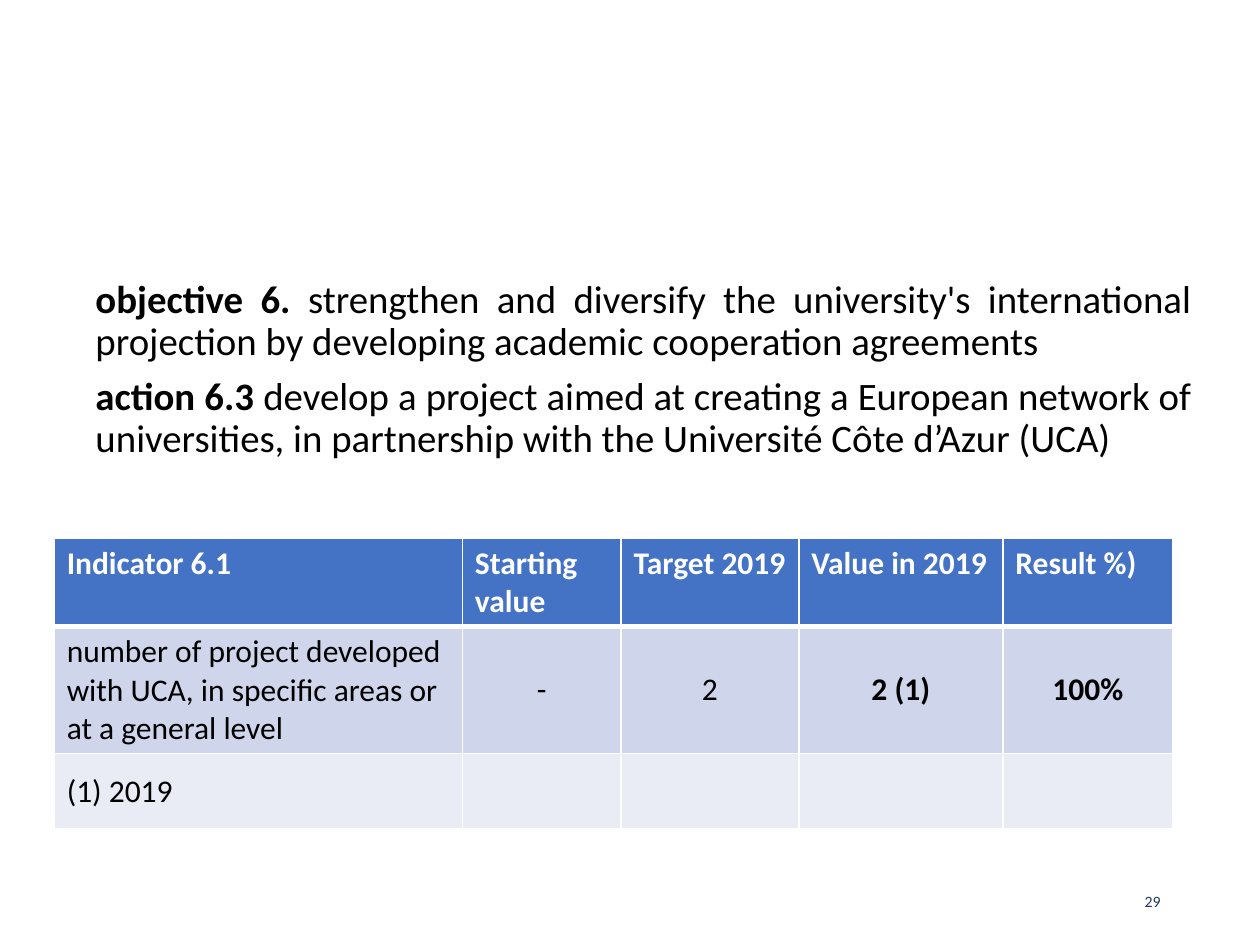
from dataclasses import dataclass

from lxml.etree import SubElement
from pptx import Presentation
from pptx.dml.color import RGBColor
from pptx.enum.text import MSO_ANCHOR, PP_ALIGN
from pptx.oxml.ns import qn
from pptx.slide import Slide
from pptx.table import _Cell
from pptx.util import Inches, Pt


@dataclass(frozen=True)
class Theme:
    """Colours, font and type sizes of the slide."""
    font: str = "Calibri"
    ink: str = "000000"
    white: str = "FFFFFF"
    navy: str = "203864"
    head: str = "4472C4"
    bands: tuple[str, ...] = ("CFD5EA", "E9EBF5")
    body: float = 22.2
    grid: float = 18
    note: float = 9


@dataclass(frozen=True)
class Box:
    """Place and size in inches."""
    left: float
    top: float
    width: float
    height: float

    def lengths(self) -> list[int]:
        """Return the four values as lengths."""
        return [Inches(n) for n in (self.left, self.top, self.width, self.height)]


@dataclass(frozen=True)
class Point:
    """A bold label with the text that follows it."""
    label: str
    text: str


@dataclass(frozen=True)
class Entry:
    """Text of one table cell."""
    text: str = ""
    bold: bool = False
    align: PP_ALIGN = PP_ALIGN.LEFT


THEME = Theme()
MID = PP_ALIGN.CENTER
COLS = (3.24, 1.26, 1.41, 1.62, 1.35)
ROWS = (0.7, 1.01, 0.6)
POINTS = (
    Point("objective 6.", " strengthen and diversify the university's international "
          "projection by developing academic cooperation agreements"),
    Point("action 6.3 ", "develop a project aimed at creating a European network of "
          "universities, in partnership with the Université Côte d’Azur (UCA)"),
)
HEADS = ("Indicator 6.1", "Starting value", "Target 2019", "Value in 2019", "Result %)")
GRID = (
    tuple(Entry(text, True) for text in HEADS),
    (Entry("number of project developed with UCA, in specific areas or at a general level"),
     Entry("-", align=MID), Entry("2", align=MID),
     Entry("2 (1)", True, MID), Entry("100%", True, MID)),
    (Entry("(1) 2019"),) + (Entry(),) * 4,
)


def style(font, size: float, color: str) -> None:
    """Set the face, size and colour of a font."""
    font.name = THEME.font
    font.size = Pt(size)
    font.color.rgb = RGBColor.from_string(color)


def add_points(slide: Slide, box: Box, points: tuple[Point, ...]) -> None:
    """Draw the justified text with bold labels."""
    frame = slide.shapes.add_textbox(*box.lengths()).text_frame
    frame.word_wrap = True
    for i, point in enumerate(points):
        para = frame.add_paragraph() if i else frame.paragraphs[0]
        para.alignment = PP_ALIGN.JUSTIFY
        para.line_spacing = 0.9
        para.space_before = Pt(7.5 if i else 0)
        style(para.font, THEME.body, THEME.ink)
        for text, bold in ((point.label, True), (point.text, False)):
            run = para.add_run()
            run.text = text
            run.font.bold = bold


def add_lines(cell: _Cell, base: float) -> None:
    """Give a cell white borders, with its own width at the base."""
    props = cell._tc.get_or_add_tcPr()
    for side, width in (("L", 1), ("R", 1), ("T", 1), ("B", base)):
        line = SubElement(props, qn(f"a:ln{side}"), w=str(Pt(width)))
        fill = SubElement(line, qn("a:solidFill"))
        SubElement(fill, qn("a:srgbClr"), val=THEME.white)


def fill_cell(cell: _Cell, entry: Entry, row: int) -> None:
    """Write and format one table cell."""
    head = row == 0
    add_lines(cell, 3 if head else 1)
    cell.fill.solid()
    color = THEME.head if head else THEME.bands[row - 1]
    cell.fill.fore_color.rgb = RGBColor.from_string(color)
    cell.vertical_anchor = MSO_ANCHOR.TOP if head else MSO_ANCHOR.MIDDLE
    cell.text = entry.text
    para = cell.text_frame.paragraphs[0]
    para.alignment = entry.align
    style(para.font, THEME.grid, THEME.white if head else THEME.ink)
    para.font.bold = entry.bold


def add_grid(slide: Slide, left: float, top: float) -> None:
    """Draw the indicator table."""
    box = Box(left, top, sum(COLS), sum(ROWS))
    table = slide.shapes.add_table(len(ROWS), len(COLS), *box.lengths()).table
    for col, width in zip(table.columns, COLS):
        col.width = Inches(width)
    for row, height in zip(table.rows, ROWS):
        row.height = Inches(height)
    for r, entries in enumerate(GRID):
        for c, entry in enumerate(entries):
            fill_cell(table.cell(r, c), entry, r)


def add_number(slide: Slide, box: Box, text: str) -> None:
    """Draw the page number."""
    frame = slide.shapes.add_textbox(*box.lengths()).text_frame
    frame.word_wrap = True
    frame.vertical_anchor = MSO_ANCHOR.MIDDLE
    para = frame.paragraphs[0]
    para.text = text
    para.alignment = PP_ALIGN.RIGHT
    style(para.font, THEME.note, THEME.navy)


def main() -> None:
    """Build the slide and save it."""
    deck = Presentation()
    deck.slide_width, deck.slide_height = Inches(10), Inches(7.5)
    slide = deck.slides.add_slide(deck.slide_layouts[6])
    add_number(slide, Box(7.06, 6.95, 2.25, 0.4), "29")
    add_points(slide, Box(0.66, 2.17, 8.9, 1.81), POINTS)
    add_grid(slide, 0.43, 4.27)
    deck.save("out.pptx")


if __name__ == "__main__":
    main()
